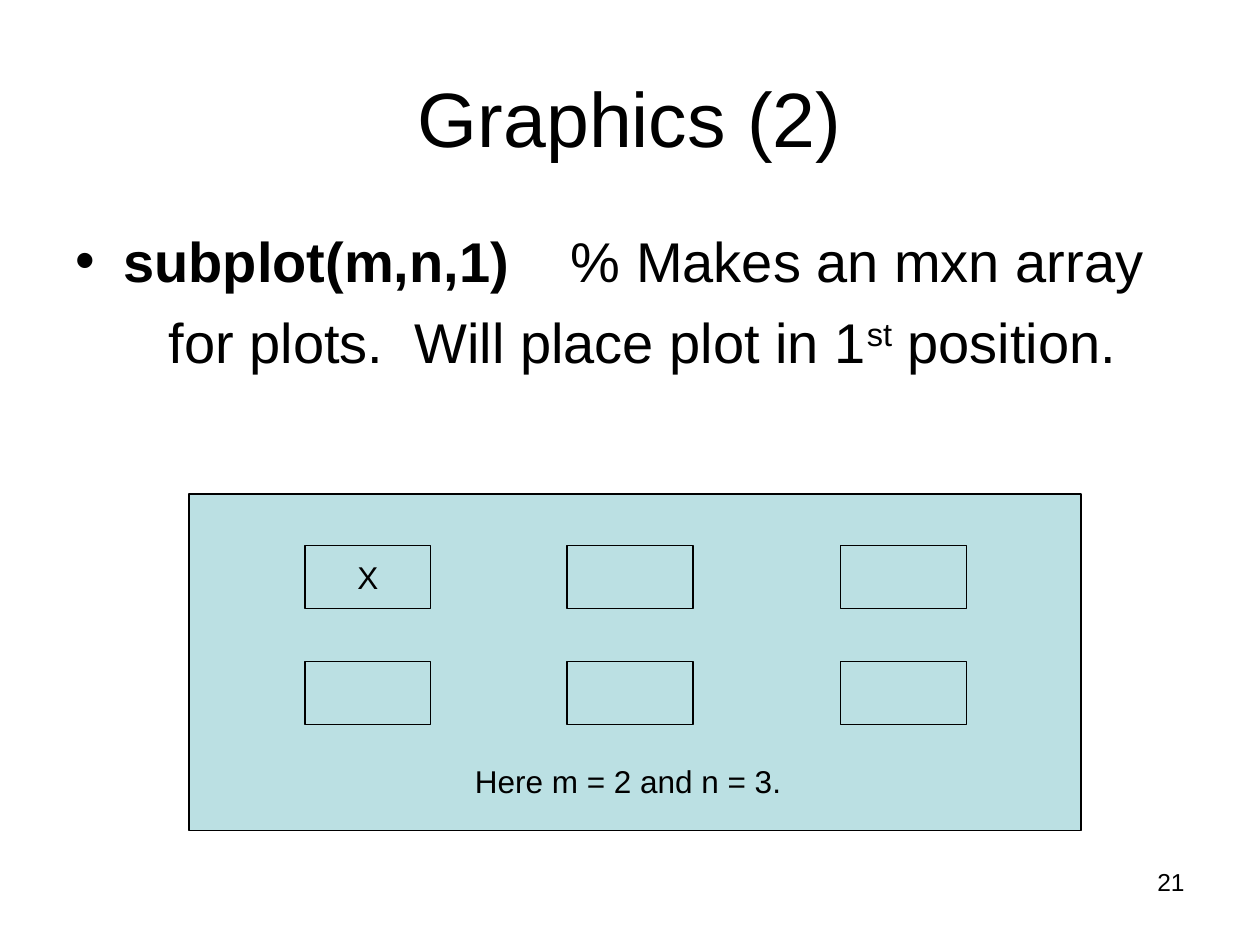
import pptx
import pptx.util
import pptx.dml.color
import pptx.enum.shapes
import pptx.enum.text
import pptx.oxml
import pptx.oxml.ns

Inches, Pt = pptx.util.Inches, pptx.util.Pt
RGB = pptx.dml.color.RGBColor
ALIGN = pptx.enum.text.PP_ALIGN
ANCHOR = pptx.enum.text.MSO_ANCHOR
FIT = pptx.enum.text.MSO_AUTO_SIZE
BLACK = RGB(0, 0, 0)
TEAL = RGB(0xBB, 0xE0, 0xE3)
COLS = (2.42, 4.5, 6.67)
ROWS = (4.33, 5.25)


def place(shape, x, y, w, h):
    shape.left, shape.top = Inches(x), Inches(y)
    shape.width, shape.height = Inches(w), Inches(h)


def add_run(para, text, size, bold=False, lift=0):
    """Add one run; lift raises it, in percent of the text size."""
    run = para.add_run()
    run.text = text
    font = run.font
    font.name, font.size, font.bold = "Arial", Pt(size), bold
    font.color.rgb = BLACK
    if lift:
        run._r.get_or_add_rPr().set("baseline", str(lift * 1000))


def add_prop(para, xml):
    """Append a bullet or tab element to the paragraph's properties."""
    space = pptx.oxml.ns.nsdecls("a")
    para._p.get_or_add_pPr().append(
        pptx.oxml.parse_xml(xml.replace("NS", space, 1)))


def indent(para, left, first):
    props = para._p.get_or_add_pPr()
    props.set("marL", str(Inches(left)))
    props.set("indent", str(Inches(first)))


def add_title(slide, text):
    title = slide.shapes.title
    place(title, 0.5, 0.3, 9, 1.25)
    frame = title.text_frame
    frame.vertical_anchor = ANCHOR.MIDDLE
    para = frame.paragraphs[0]
    para.alignment = ALIGN.CENTER
    add_run(para, text, 44)


def add_body(slide):
    body = slide.placeholders[1]
    place(body, 0.5, 1.75, 9, 4.95)
    frame = body.text_frame
    frame.auto_size = FIT.NONE

    call = frame.paragraphs[0]
    indent(call, 0.38, -0.38)
    call.space_before = Pt(0)
    add_prop(call, '<a:buChar NS char="•"/>')
    add_prop(call, '<a:tabLst NS><a:tab pos="%d" algn="l"/></a:tabLst>'
             % Inches(3.93))
    add_run(call, "subplot(m,n,1)", 32, bold=True)
    add_run(call, "\t% Makes an mxn array", 32)

    rest = frame.add_paragraph()
    indent(rest, 0.74, 0)
    rest.space_before = Pt(7.5)
    add_prop(rest, "<a:buNone NS/>")
    add_run(rest, "for plots.  Will place plot in 1", 32)
    add_run(rest, "st", 32, lift=30)
    add_run(rest, " position.", 32)


def add_rect(slide, x, y, w, h):
    rect = slide.shapes.add_shape(
        pptx.enum.shapes.MSO_SHAPE.RECTANGLE,
        Inches(x), Inches(y), Inches(w), Inches(h))
    rect.shadow.inherit = False
    rect.fill.solid()
    rect.fill.fore_color.rgb = TEAL
    rect.line.color.rgb = BLACK
    rect.line.width = Pt(0.75)
    return rect


def add_plots(slide):
    """Draw the figure window with its grid of plots, the first marked."""
    add_rect(slide, 1.5, 3.92, 7.08, 2.67)
    plots = [add_rect(slide, x, y, 1, 0.5) for y in ROWS for x in COLS]
    frame = plots[0].text_frame
    frame.word_wrap = False
    frame.vertical_anchor = ANCHOR.MIDDLE
    para = frame.paragraphs[0]
    para.alignment = ALIGN.CENTER
    add_run(para, "X", 18)


def add_label(slide, text, size, x, y, w, h, align=ALIGN.LEFT):
    box = slide.shapes.add_textbox(
        Inches(x), Inches(y), Inches(w), Inches(h))
    box.text_frame.word_wrap = True
    para = box.text_frame.paragraphs[0]
    para.alignment = align
    add_run(para, text, size)


def main():
    deck = pptx.Presentation()
    deck.slide_width, deck.slide_height = Inches(10), Inches(7.5)
    slide = deck.slides.add_slide(deck.slide_layouts[1])
    add_title(slide, "Graphics (2)")
    add_body(slide)
    add_plots(slide)
    add_label(slide, "Here m = 2 and n = 3.", 18, 3.67, 6, 2.65, 0.4)
    add_label(slide, "21", 14, 7.17, 6.83, 2.33, 0.52, ALIGN.RIGHT)
    deck.save("out.pptx")


if __name__ == "__main__":
    main()
